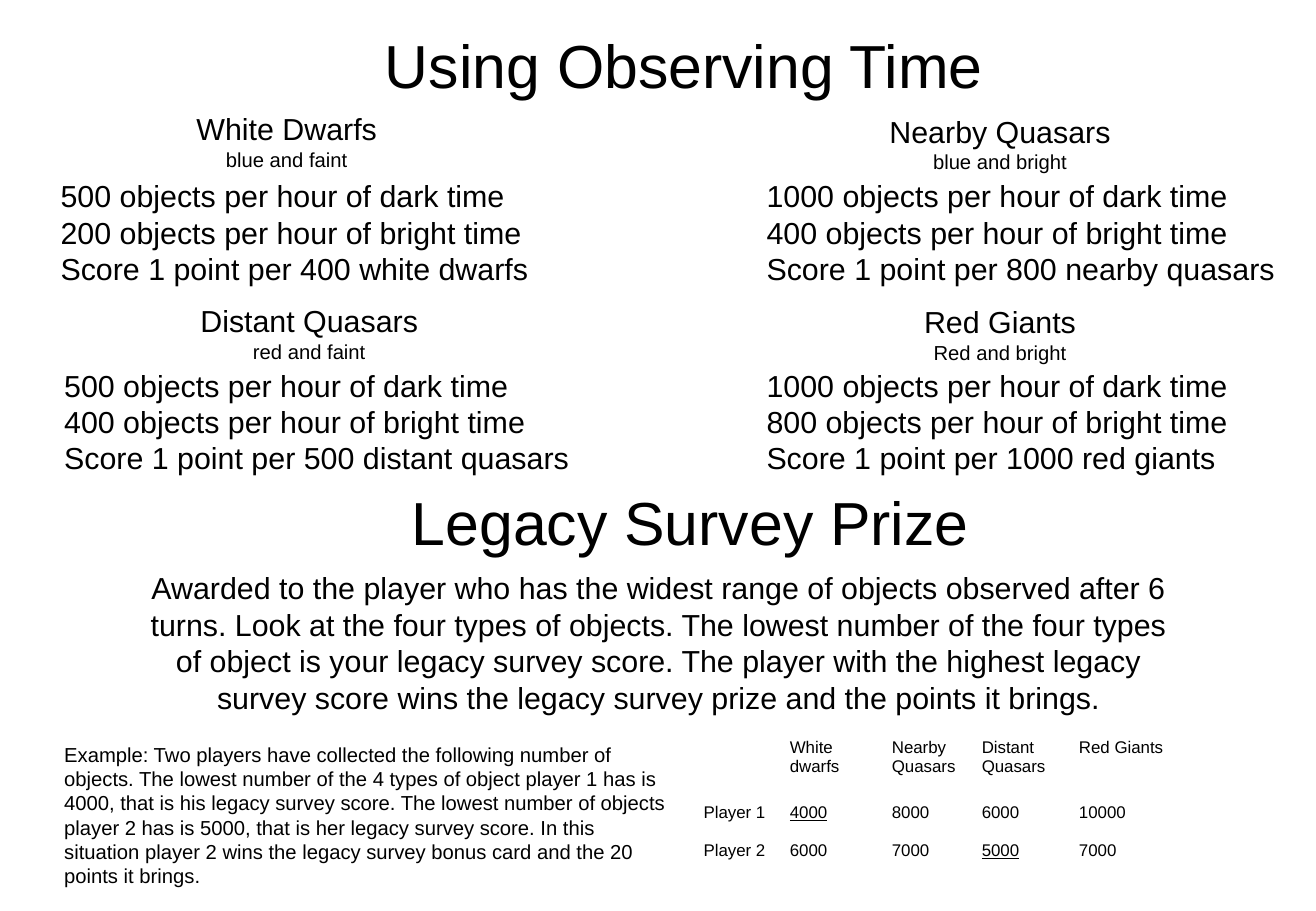
from pptx import Presentation
from pptx.dml.color import RGBColor
from pptx.enum.text import MSO_AUTO_SIZE, PP_ALIGN
from pptx.util import Inches, Pt

LEFT, CENTER = PP_ALIGN.LEFT, PP_ALIGN.CENTER
GROW = MSO_AUTO_SIZE.SHAPE_TO_FIT_TEXT
FONT = "Arial"
BLACK = "000000"

# Object type, its look, box of the heading, box of the rules, rules
OBJECT_TYPES = [
    ("White Dwarfs", "blue and faint", (1.51, 0.86, 1.7, 0.61), (0.4, 1.41, 4.09, 1.01),
     ["500 objects per hour of dark time",
      "200 objects per hour of bright time",
      "Score 1 point per 400 white dwarfs"]),
    ("Nearby Quasars", "blue and bright", (7.21, 0.88, 2.04, 0.61), (6.21, 1.41, 4.42, 1.01),
     ["1000 objects per hour of dark time",
      "400 objects per hour of bright time",
      "Score 1 point per 800 nearby quasars"]),
    ("Distant Quasars", "red and faint", (1.54, 2.44, 2.01, 0.61), (0.43, 2.97, 4.37, 1.01),
     ["500 objects per hour of dark time",
      "400 objects per hour of bright time",
      "Score 1 point per 500 distant quasars"]),
    ("Red Giants", "Red and bright", (7.5, 2.45, 1.46, 0.61), (6.21, 2.97, 4.03, 1.01),
     ["1000 objects per hour of dark time",
      "800 objects per hour of bright time",
      "Score 1 point per 1000 red giants"]),
]

PRIZE_RULE = (
    "Awarded to the player who has the widest range of objects observed after 6 turns. "
    "Look at the four types of objects. The lowest number of the four types of object is "
    "your legacy survey score. The player with the highest legacy survey score wins the "
    "legacy survey prize and the points it brings."
)
EXAMPLE = (
    "Example: Two players have collected the following number of objects. The lowest number "
    "of the 4 types of object player 1 has is 4000, that is his legacy survey score. The "
    "lowest number of objects player 2 has is 5000, that is her legacy survey score. In this "
    "situation player 2 wins the legacy survey bonus card and the 20 points it brings."
)

SCORES = [
    ["", "White dwarfs", "Nearby Quasars", "Distant Quasars", "Red Giants"],
    ["Player 1", "4000", "8000", "6000", "10000"],
    ["Player 2", "6000", "7000", "5000", "7000"],
]
LOWEST_SCORES = {"4000", "5000"}
COLUMN_WIDTHS = [0.71, 0.84, 0.74, 0.8, 0.96]
ROW_HEIGHTS = [0.53, 0.32, 0.41]


def color(hex_value):
    return RGBColor.from_string(hex_value)


def style(paragraph, size, align=LEFT):
    paragraph.alignment = align
    for run in paragraph.runs:
        run.font.name = FONT
        run.font.size = Pt(size)
        run.font.color.rgb = color(BLACK)


def add_text(slide, box, lines, sizes, align=LEFT, wrap=False):
    """Write one paragraph per line, each with its own size."""
    frame = slide.shapes.add_textbox(*map(Inches, box)).text_frame
    frame.text = "\n".join(lines)
    frame.word_wrap = wrap
    frame.auto_size = GROW
    for paragraph, size in zip(frame.paragraphs, sizes):
        style(paragraph, size, align)


def add_score_table(slide, left, top):
    width, height = sum(COLUMN_WIDTHS), sum(ROW_HEIGHTS)
    table = slide.shapes.add_table(
        len(ROW_HEIGHTS), len(COLUMN_WIDTHS),
        Inches(left), Inches(top), Inches(width), Inches(height)).table
    table.first_row = False
    table.horz_banding = False
    for column, column_width in zip(table.columns, COLUMN_WIDTHS):
        column.width = Inches(column_width)
    for row, row_height, values in zip(table.rows, ROW_HEIGHTS, SCORES):
        row.height = Inches(row_height)
        for cell, value in zip(row.cells, values):
            cell.fill.background()
            cell.margin_right = Inches(0.05)
            cell.text = value
            paragraph = cell.text_frame.paragraphs[0]
            style(paragraph, 10)
            if value in LOWEST_SCORES:
                paragraph.runs[0].font.underline = True


def main():
    prs = Presentation()
    prs.slide_width, prs.slide_height = Inches(10.83), Inches(7.5)
    slide = prs.slides.add_slide(prs.slide_layouts[6])

    # Observing time for the four object types
    add_text(slide, (3.07, 0.18, 5.16, 0.71), ["Using Observing Time"], [36])
    for name, look, heading_box, rules_box, rules in OBJECT_TYPES:
        add_text(slide, heading_box, [name, look], [18, 12], CENTER)
        add_text(slide, rules_box, rules, [18] * len(rules))

    # Legacy survey prize
    add_text(slide, (3.29, 3.94, 4.83, 0.71), ["Legacy Survey Prize"], [36])
    add_text(slide, (1.09, 4.64, 8.66, 1.31), [PRIZE_RULE], [18], CENTER, wrap=True)

    # Worked example with its scores
    add_score_table(slide, 5.69, 6.03)
    add_text(slide, (0.43, 6.06, 5.15, 1.31), [EXAMPLE], [12], wrap=True)

    prs.save("out.pptx")


if __name__ == "__main__":
    main()
